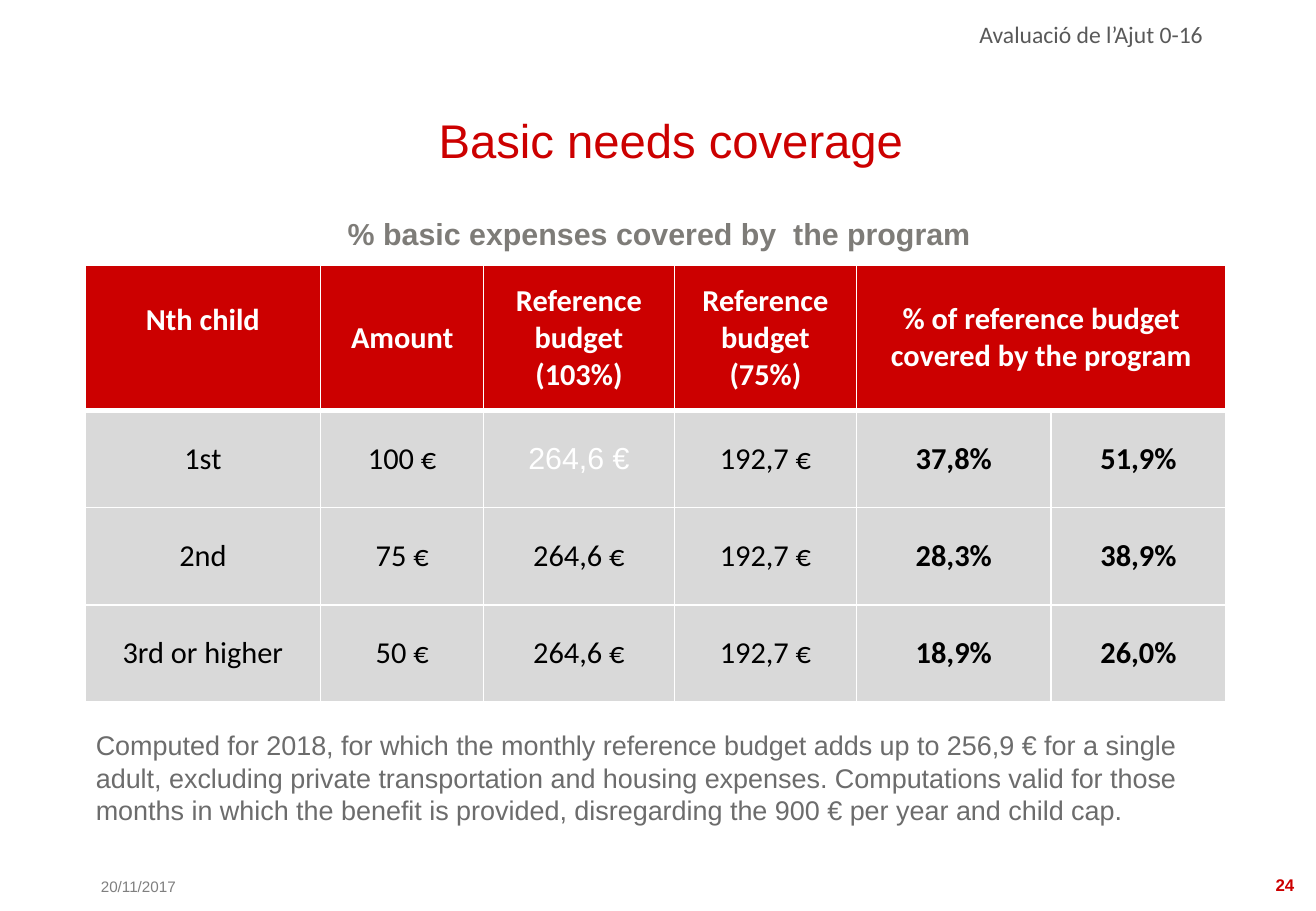
from lxml import etree
from pptx import Presentation
from pptx.dml.color import RGBColor
from pptx.enum.shapes import MSO_SHAPE
from pptx.enum.text import MSO_ANCHOR, PP_ALIGN
from pptx.oxml.ns import qn
from pptx.util import Pt

PX = 9144  # 100 px to the inch
RECT = MSO_SHAPE.RECTANGLE
TOP, MIDDLE, BOTTOM = MSO_ANCHOR.TOP, MSO_ANCHOR.MIDDLE, MSO_ANCHOR.BOTTOM
LEFT, CENTER, RIGHT = PP_ALIGN.LEFT, PP_ALIGN.CENTER, PP_ALIGN.RIGHT

RED, WHITE, BLACK, CELL_GREY = "CC0000", "FFFFFF", "000000", "D9D9D9"

HEADERS = ["Nth child", "Amount", "Reference budget (103%)",
           "Reference budget (75%)",
           "% of reference budget covered by the program", ""]
ROWS = [
    ["1st", "100 €", "264,6 €", "192,7 €", "37,8%", "51,9%"],
    ["2nd", "75 €", "264,6 €", "192,7 €", "28,3%", "38,9%"],
    ["3rd or higher", "50 €", "264,6 €", "192,7 €", "18,9%", "26,0%"],
]
COL_WIDTHS = [194, 134, 157, 150, 160, 144]
ROW_HEIGHTS = [120, 80, 80, 80]
FIRST_SHARE_COL = 4
NOTE = ("Computed for 2018, for which the monthly reference budget adds up to "
        "256,9 € for a single adult, excluding private transportation and "
        "housing expenses. Computations valid for those months in which the "
        "benefit is provided, disregarding the 900 € per year and child cap.")


def px(n):
    return n * PX


def rgb(color):
    return RGBColor.from_string(color)


def write(tf, text, size, color, font="Arial", bold=False, align=LEFT):
    tf.text = text
    p = tf.paragraphs[0]
    p.alignment = align
    for r in p.runs:
        r.font.size = Pt(size)
        r.font.name = font
        r.font.bold = bold
        r.font.color.rgb = rgb(color)
    return p


def set_margins(item, left, top, right, bottom):
    item.margin_left, item.margin_top = px(left), px(top)
    item.margin_right, item.margin_bottom = px(right), px(bottom)


def add_text(slide, box, text, size, color, margins=(10, 5, 10, 5),
             anchor=TOP, **style):
    tf = slide.shapes.add_textbox(*map(px, box)).text_frame
    tf.word_wrap = True
    tf.vertical_anchor = anchor
    set_margins(tf, *margins)
    return write(tf, text, size, color, **style)


def add_title(slide, box, text):
    sp = slide.shapes.add_shape(RECT, *map(px, box))
    sp.shadow.inherit = False
    sp.fill.solid()
    sp.fill.fore_color.rgb = rgb(WHITE)
    sp.line.color.rgb = rgb(WHITE)
    sp.line.width = Pt(0.75)
    tf = sp.text_frame
    tf.vertical_anchor = TOP
    set_margins(tf, 0, 5, 10, 5)
    write(tf, text, 28, RED)


def set_borders(cell, top, bottom):
    """Draw white borders; they must come before the fill in the cell."""
    tc_pr = cell._tc.get_or_add_tcPr()
    for side, width in (("L", 1), ("R", 1), ("T", top), ("B", bottom)):
        ln = etree.SubElement(tc_pr, qn(f"a:ln{side}"), w=str(Pt(width)))
        fill = etree.SubElement(ln, qn("a:solidFill"))
        etree.SubElement(fill, qn("a:srgbClr"), val=WHITE)


def format_cell(cell, text, row, col):
    header = row == 0
    set_borders(cell, 3 if row == 1 else 1, 3 if header else 1)
    cell.fill.solid()
    cell.fill.fore_color.rgb = rgb(RED if header else CELL_GREY)
    cell.vertical_anchor = MIDDLE
    set_margins(cell, 7, 0, 7, 0)
    faded = (row, col) == (1, 2)
    write(cell.text_frame, text, 18, WHITE if header or faded else BLACK,
          font="Arial" if faded else "Calibri",
          bold=header or col >= FIRST_SHARE_COL, align=CENTER)


def add_coverage_table(slide, left, top):
    table = slide.shapes.add_table(
        len(ROW_HEIGHTS), len(COL_WIDTHS), px(left), px(top),
        px(sum(COL_WIDTHS)), px(sum(ROW_HEIGHTS))).table
    for column, width in zip(table.columns, COL_WIDTHS):
        column.width = px(width)
    for table_row, height in zip(table.rows, ROW_HEIGHTS):
        table_row.height = px(height)
    for row, texts in enumerate([HEADERS] + ROWS):
        for col, text in enumerate(texts):
            format_cell(table.cell(row, col), text, row, col)
    table.cell(0, FIRST_SHARE_COL).merge(table.cell(0, FIRST_SHARE_COL + 1))
    nth_child = table.cell(0, 0)
    nth_child.vertical_anchor = TOP
    nth_child.margin_top = px(30)


def main():
    prs = Presentation()
    prs.slide_width, prs.slide_height = px(1083), px(750)
    slide = prs.slides.add_slide(prs.slide_layouts[6])

    footer = {"margins": (0, 5, 10, 5), "anchor": BOTTOM}
    add_text(slide, (83, 718, 92, 24), "20/11/2017", 9, "7F7F7F", **footer)
    add_text(slide, (1025, 717, 50, 25), "24", 10, RED, bold=True,
             align=RIGHT, **footer)
    running_head = add_text(slide, (317, 25, 683, 21),
                            "Avaluació de l’Ajut 0-16", 14, "595959",
                            font="Calibri", align=RIGHT)
    running_head.line_spacing = 0.3

    add_coverage_table(slide, 70, 218)
    add_text(slide, (69, 595, 939, 132), NOTE, 16, "6C6C6C")
    add_text(slide, (69, 173, 947, 107),
             "% basic expenses covered by  the program", 18, "7E7C78",
             margins=(4, 4, 4, 4), bold=True, align=CENTER)
    add_title(slide, (361, 87, 506, 63), "Basic needs coverage")

    prs.save("out.pptx")


if __name__ == "__main__":
    main()
